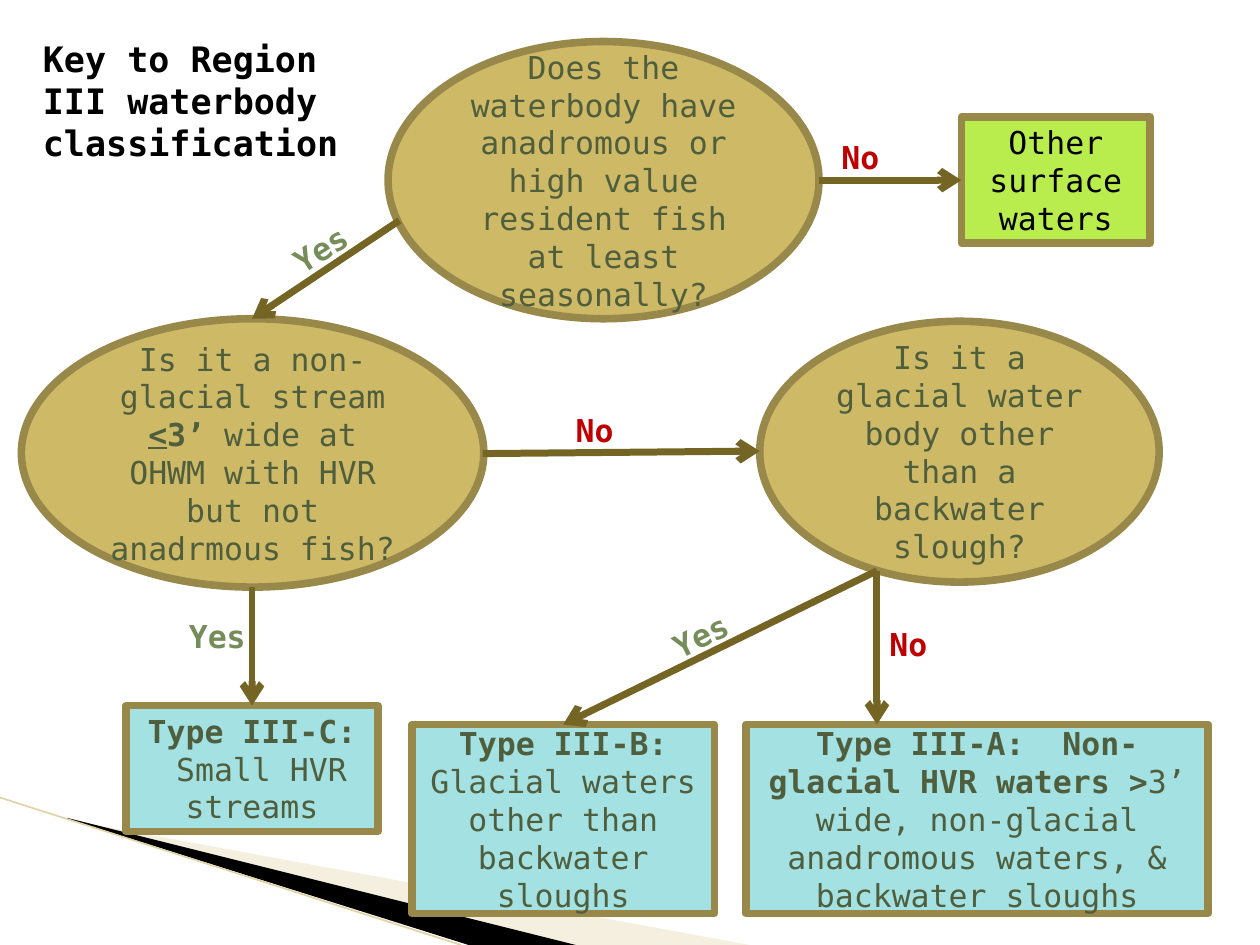
"""Build the waterbody classification flowchart slide."""
from dataclasses import dataclass
from typing import Optional

from lxml import etree
from pptx import Presentation
from pptx import util as u
from pptx.dml.color import RGBColor
from pptx.enum import shapes, text
from pptx.oxml import ns


@dataclass(frozen=True)
class Theme:
    """Colours, type sizes and line widths."""
    font: str = "DejaVu Sans Mono"
    title_size: int = 20
    body_size: int = 18
    border_width: float = 4.33
    arrow_width: float = 4
    rule_width: float = 0.95
    black: str = "000000"
    ink: str = "4F5E3C"
    question: str = "CEB966"
    outcome: str = "A4E1E2"
    other: str = "B8ED4D"
    border: str = "98894B"
    arrow: str = "756525"
    yes: str = "768D5A"
    no: str = "C00000"
    cream: str = "E4D7AD"
    rule: str = "E1D3A6"


THEME = Theme()
OVAL = shapes.MSO_SHAPE.OVAL
RECTANGLE = shapes.MSO_SHAPE.RECTANGLE


@dataclass(frozen=True)
class Span:
    """A stretch of text in one format."""
    words: str
    bold: bool = False
    underline: bool = False


@dataclass(frozen=True)
class Node:
    """A question or an outcome."""
    name: str
    kind: shapes.MSO_SHAPE
    at: tuple[float, float, float, float]
    fill: str
    spans: tuple[Span, ...]
    ink: str = THEME.ink


@dataclass(frozen=True)
class Arrow:
    """An arrow, joined to a rectangle's side where a target is named."""
    start: tuple[float, float]
    end: tuple[float, float]
    target: Optional[str] = None
    side: int = 0


@dataclass(frozen=True)
class Answer:
    """A yes or no label beside an arrow."""
    words: str
    left: float
    top: float
    color: str
    rotation: float = 0


@dataclass(frozen=True)
class Wedge:
    """A filled corner decoration."""
    points: tuple[tuple[float, float], ...]
    fill: str
    opacity: int = 100


WEDGES = (
    Wedge(((0.55, 6.51), (5.95, 7.5), (4.56, 7.5), (0.55, 6.5)), THEME.cream, 40),
    Wedge(((0.53, 6.49), (4.57, 7.5), (3.72, 7.5), (0.54, 6.5)), THEME.black),
)
NODES = (
    Node("fish", OVAL, (3.08, 0.33, 3.42, 2.2), THEME.question, (
        Span("Does the waterbody have anadromous or high value resident fish at least seasonally?"),)),
    Node("glacial", OVAL, (6.03, 2.55, 3.17, 2.07), THEME.question, (
        Span("Is it a glacial water body other than a backwater slough?"),)),
    Node("stream", OVAL, (0.17, 2.53, 3.67, 2.13), THEME.question, (
        Span("Is it a non-glacial stream "), Span("<", True, True), Span("3’ ", True),
        Span("wide at OHWM with HVR but not anadrmous fish?"))),
    Node("type_c", RECTANGLE, (1, 5.6, 2, 1), THEME.outcome, (
        Span("Type III-C:  ", True), Span("Small HVR streams"))),
    Node("type_b", RECTANGLE, (3.27, 5.75, 2.4, 1.5), THEME.outcome, (
        Span("Type III-B: ", True), Span("Glacial waters other than backwater sloughs"))),
    Node("type_a", RECTANGLE, (5.92, 5.75, 3.67, 1.5), THEME.outcome, (
        Span("Type III-A:  Non-glacial HVR waters >", True),
        Span("3’ wide, non-glacial anadromous waters, & backwater sloughs"))),
    Node("other", RECTANGLE, (7.63, 0.93, 1.5, 1), THEME.other, (
        Span("Other surface waters"),), THEME.black),
)
ARROWS = (
    Arrow((6.5, 1.43), (7.63, 1.43), "other", 1),
    Arrow((6.96, 4.53), (6.96, 5.75)),
    Arrow((3.83, 3.6), (6.03, 3.58)),
    Arrow((3.17, 1.75), (2, 2.53)),
    Arrow((2, 4.66), (2, 5.6), "type_c"),
    Arrow((6.96, 4.53), (4.47, 5.75), "type_b"),
)
ANSWERS = (
    Answer("No", 6.58, 1.05, THEME.no),
    Answer("No", 4.47, 3.21, THEME.no),
    Answer("No", 6.96, 4.91, THEME.no),
    Answer("Yes", 1.4, 4.85, THEME.yes),
    Answer("Yes", 2.21, 1.75, THEME.yes, 327.4),
    Answer("Yes", 5.23, 4.82, THEME.yes, 333.9),
)


def set_all(target, values: dict) -> None:
    """Set each named attribute on the target."""
    for name, value in values.items():
        setattr(target, name, value)


def write(box, spans: tuple[Span, ...], color: str, size: int, align, anchor) -> None:
    """Fill a shape with one paragraph of formatted spans."""
    set_all(box.text_frame, {"word_wrap": True, "vertical_anchor": anchor,
                             "auto_size": text.MSO_AUTO_SIZE.NONE})
    para = box.text_frame.paragraphs[0]
    para.alignment = align
    for span in spans:
        run = para.add_run()
        run.text = span.words
        set_all(run.font, {"name": THEME.font, "size": u.Pt(size),
                           "bold": span.bold, "underline": span.underline})
        run.font.color.rgb = RGBColor.from_string(color)


def draw_wedge(page, wedge: Wedge) -> None:
    """Draw a corner decoration."""
    points = [(u.Inches(x), u.Inches(y)) for x, y in wedge.points]
    builder = page.shapes.build_freeform(*points[0])
    builder.add_line_segments(points[1:])
    shape = builder.convert_to_shape()
    shape.shadow.inherit = False
    shape.line.fill.background()
    shape.fill.solid()
    shape.fill.fore_color.rgb = RGBColor.from_string(wedge.fill)
    if wedge.opacity < 100:
        color = shape.fill._xPr.find(".//" + ns.qn("a:srgbClr"))
        etree.SubElement(color, ns.qn("a:alpha"), val=str(wedge.opacity * 1000))


def draw_line(page, start: tuple[float, float], end: tuple[float, float], color: str, width: float):
    """Draw a straight line without a shadow."""
    line = page.shapes.add_connector(
        shapes.MSO_CONNECTOR.STRAIGHT, *(u.Inches(value) for value in start + end))
    line.line.color.rgb = RGBColor.from_string(color)
    line.line.width = u.Pt(width)
    etree.SubElement(line._element.spPr, ns.qn("a:effectLst"))
    return line


def draw_node(page, node: Node):
    """Draw a question or outcome."""
    shape = page.shapes.add_shape(node.kind, *(u.Inches(value) for value in node.at))
    shape.shadow.inherit = False
    shape.fill.solid()
    shape.fill.fore_color.rgb = RGBColor.from_string(node.fill)
    shape.line.color.rgb = RGBColor.from_string(THEME.border)
    shape.line.width = u.Pt(THEME.border_width)
    write(shape, node.spans, node.ink, THEME.body_size, text.PP_ALIGN.CENTER, text.MSO_ANCHOR.MIDDLE)
    return shape


def draw_arrow(page, arrow: Arrow, nodes: dict) -> None:
    """Draw an arrow and join it to its target."""
    line = draw_line(page, arrow.start, arrow.end, THEME.arrow, THEME.arrow_width)
    etree.SubElement(line.line._get_or_add_ln(), ns.qn("a:tailEnd"), type="arrow")
    if arrow.target:
        line.end_connect(nodes[arrow.target], arrow.side)


def draw_answer(page, answer: Answer) -> None:
    """Draw a yes or no label."""
    box = page.shapes.add_textbox(
        *(u.Inches(value) for value in (answer.left, answer.top, 0.75, 0.4)))
    box.rotation = answer.rotation
    write(box, (Span(answer.words, True),), answer.color, THEME.body_size,
          text.PP_ALIGN.LEFT, text.MSO_ANCHOR.TOP)


def main() -> None:
    """Build and save the deck."""
    deck = Presentation()
    set_all(deck, {"slide_width": u.Inches(10), "slide_height": u.Inches(7.5)})
    page = deck.slides.add_slide(deck.slide_layouts[5])
    title = page.shapes.title
    set_all(title, {"left": u.Inches(0.24), "top": u.Inches(0.25),
                    "width": u.Inches(2.83), "height": u.Inches(1.11)})
    write(title, (Span("Key to Region III waterbody classification", True),), THEME.black,
          THEME.title_size, text.PP_ALIGN.LEFT, text.MSO_ANCHOR.TOP)
    for wedge in WEDGES:
        draw_wedge(page, wedge)
    draw_line(page, (0, 6.33), (3.66, 7.5), THEME.rule, THEME.rule_width)
    nodes = {node.name: draw_node(page, node) for node in NODES}
    for arrow in ARROWS:
        draw_arrow(page, arrow, nodes)
    for answer in ANSWERS:
        draw_answer(page, answer)
    deck.save("out.pptx")


if __name__ == "__main__":
    main()
